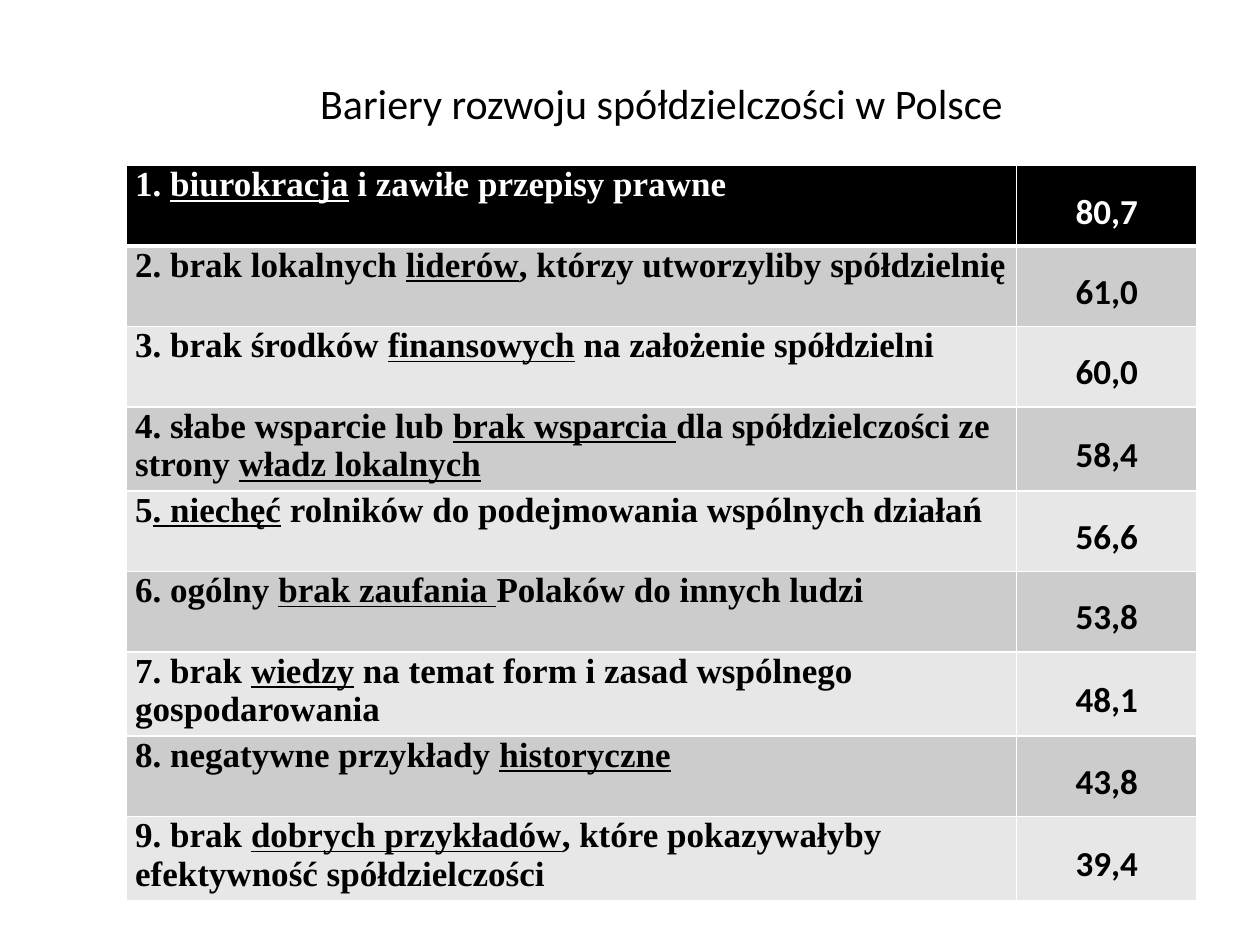
from lxml.etree import SubElement
from pptx import Presentation
from pptx.dml.color import RGBColor
from pptx.enum.text import MSO_ANCHOR as Anchor, PP_ALIGN as Align
from pptx.oxml.ns import qn
from pptx.util import Pt

BLACK = RGBColor(0x00, 0x00, 0x00)
WHITE = RGBColor(0xFF, 0xFF, 0xFF)
DARK_BAND = RGBColor(0xCC, 0xCC, 0xCC)
LIGHT_BAND = RGBColor(0xE7, 0xE7, 0xE7)

TITLE = "Bariery rozwoju spółdzielczości w Polsce"
# Each barrier: text pieces, alternately plain and underlined, then its share.
BARRIERS = [
    (["1. ", "biurokracja", " i zawiłe przepisy prawne"], "80,7"),
    (["2. brak lokalnych ", "liderów", ", którzy utworzyliby spółdzielnię"], "61,0"),
    (["3. brak środków ", "finansowych", " na założenie spółdzielni"], "60,0"),
    (["4. słabe wsparcie lub ", "brak wsparcia ",
      "dla spółdzielczości ze strony ", "władz lokalnych"], "58,4"),
    (["5", ". niechęć", " rolników do podejmowania wspólnych działań"], "56,6"),
    (["6. ogólny ", "brak zaufania ", "Polaków do innych ludzi"], "53,8"),
    (["7. brak ", "wiedzy", " na temat form i zasad wspólnego gospodarowania"], "48,1"),
    (["8. negatywne przykłady ", "historyczne"], "43,8"),
    (["9. brak ", "dobrych przykładów",
      ", które pokazywałyby efektywność spółdzielczości"], "39,4"),
]

LEFT, WIDTH = 72, 612
TITLE_TOP, TITLE_HEIGHT = 40.3, 36.7
TABLE_TOP, ROW_HEIGHT = 94.5, 46
COLUMN_WIDTHS = (509, 103)


def add_span(para, text, font, size, color, bold=False, underline=False):
    span = para.add_run()
    span.text = text
    span.font.name = font
    span.font.size = Pt(size)
    span.font.color.rgb = color
    span.font.bold = bold
    span.font.underline = underline


def style_cell(cell, fill, top, bottom):
    """Fill the cell and draw white borders with the given top and bottom widths."""
    cell.margin_left = cell.margin_right = Pt(5.2)
    cell.margin_top = cell.margin_bottom = 0
    properties = cell._tc.get_or_add_tcPr()
    for side, width in (("L", 1), ("R", 1), ("T", top), ("B", bottom)):
        line = SubElement(properties, qn(f"a:ln{side}"), w=str(Pt(width)))
        solid = SubElement(line, qn("a:solidFill"))
        SubElement(solid, qn("a:srgbClr"), val=str(WHITE))
    cell.fill.solid()
    cell.fill.fore_color.rgb = fill


def add_title(page):
    box = page.shapes.add_textbox(Pt(LEFT), Pt(TITLE_TOP), Pt(WIDTH), Pt(TITLE_HEIGHT))
    frame = box.text_frame
    frame.word_wrap = True
    frame.vertical_anchor = Anchor.MIDDLE
    para = frame.paragraphs[0]
    para.alignment = Align.CENTER
    add_span(para, TITLE, "Calibri", 24, BLACK)


def add_barrier_table(page):
    table = page.shapes.add_table(
        len(BARRIERS), len(COLUMN_WIDTHS), Pt(LEFT), Pt(TABLE_TOP),
        Pt(WIDTH), Pt(ROW_HEIGHT * len(BARRIERS))).table
    for column, width in zip(table.columns, COLUMN_WIDTHS):
        column.width = Pt(width)

    for index, (pieces, share) in enumerate(BARRIERS):
        table.rows[index].height = Pt(ROW_HEIGHT)
        header = index == 0
        color = WHITE if header else BLACK
        fill = BLACK if header else DARK_BAND if index % 2 else LIGHT_BAND
        label, value = table.cell(index, 0), table.cell(index, 1)
        for cell in (label, value):
            style_cell(cell, fill, top=3 if index == 1 else 1, bottom=3 if header else 1)

        para = label.text_frame.paragraphs[0]
        for position, piece in enumerate(pieces):
            add_span(para, piece, "Times New Roman", 20, color,
                     bold=True, underline=position % 2 == 1)

        value.vertical_anchor = Anchor.MIDDLE
        para = value.text_frame.paragraphs[0]
        para.alignment = Align.CENTER
        para.line_spacing = 1.3
        add_span(para, share, "Calibri", 20, color, bold=True)


def main():
    deck = Presentation()
    deck.slide_width, deck.slide_height = Pt(720), Pt(540)
    page = deck.slides.add_slide(deck.slide_layouts[6])
    add_title(page)
    add_barrier_table(page)
    deck.save("out.pptx")


if __name__ == "__main__":
    main()
